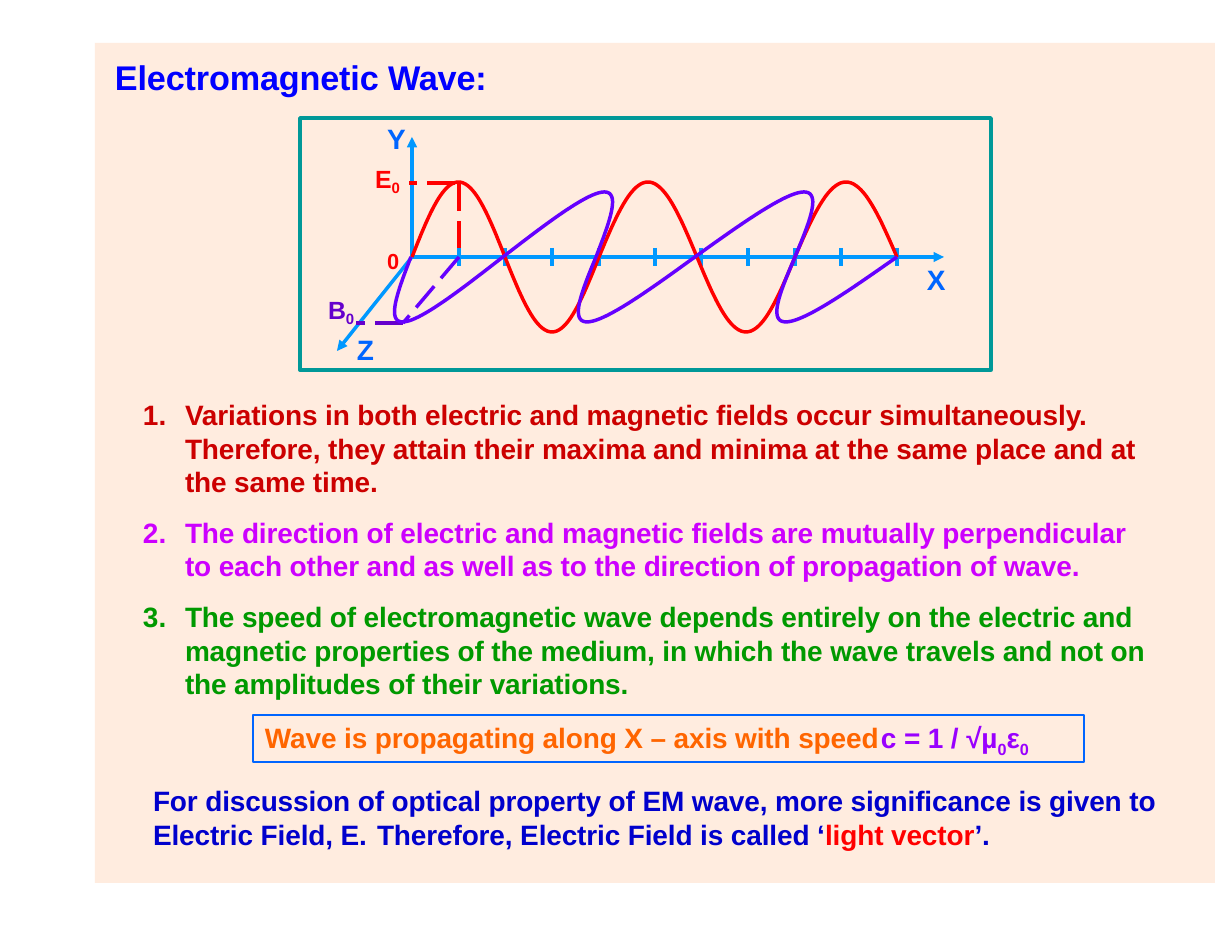
import math
import pptx
import pptx.util
import pptx.dml.color
import pptx.enum.dml
import pptx.enum.shapes
import pptx.oxml
import pptx.oxml.ns

RGB = pptx.dml.color.RGBColor
CREAM = RGB(0xFF, 0xEC, 0xDF)
SKY = RGB(0x00, 0x98, 0xFF)
AZURE = RGB(0x00, 0x65, 0xFF)
BLUE = RGB(0x00, 0x00, 0xFF)
NAVY = RGB(0x00, 0x00, 0xCC)
TEAL = RGB(0x00, 0x98, 0x98)
RED = RGB(0xFF, 0x00, 0x00)
BRICK = RGB(0xCC, 0x00, 0x00)
GREEN = RGB(0x00, 0x99, 0x00)
PINK = RGB(0xCC, 0x00, 0xFF)
ORANGE = RGB(0xFF, 0x65, 0x00)
PURPLE = RGB(0x99, 0x00, 0xFF)
VIOLET = RGB(0x65, 0x00, 0xFF)
PLUM = RGB(0x65, 0x00, 0xCC)

SCALE = 914400 / 112
MID = 257      # height of the X axis
SLANT = 0.59   # sideways lean of the magnetic wave, per half-wave width
STEPS = 40


def px(n):
    return round(n * SCALE)


def child(node, tag, **attrs):
    """Append a DrawingML element."""
    part = pptx.oxml.parse_xml(f"<a:{tag} {pptx.oxml.ns.nsdecls('a')}/>")
    for key, value in attrs.items():
        part.set(key, str(value))
    node.append(part)
    return part


def line(slide, x1, y1, x2, y2, color, dash=False, arrow=False):
    link = slide.shapes.add_connector(
        pptx.enum.shapes.MSO_CONNECTOR.STRAIGHT, px(x1), px(y1), px(x2), px(y2))
    link.line.color.rgb = color
    link.line.width = pptx.util.Pt(2.25)
    if dash:
        link.line.dash_style = pptx.enum.dml.MSO_LINE.LONG_DASH
    if arrow:
        child(link.line._get_or_add_ln(), "tailEnd", type="triangle")
    child(link._element.spPr, "effectLst")


def box(slide, x, y, w, h, fill=None, edge=None, width=2.25):
    rect = slide.shapes.add_shape(
        pptx.enum.shapes.MSO_SHAPE.RECTANGLE, px(x), px(y), px(w), px(h))
    rect.shadow.inherit = False
    if fill is None:
        rect.fill.background()
    else:
        rect.fill.solid()
        rect.fill.fore_color.rgb = fill
    if edge is None:
        rect.line.fill.background()
    else:
        rect.line.color.rgb = edge
        rect.line.width = pptx.util.Pt(width)
    return rect


def wave(slide, nodes, height, slant, color):
    """Draw one sine arc between each pair of nodes, on alternate sides."""
    for left, right in zip(nodes, nodes[1:]):
        span = right - left
        lean = math.copysign(slant * span, height)
        points = []
        for step in range(STEPS + 1):
            part = step / STEPS
            rise = math.sin(math.pi * part)
            points.append((px(left + span * part + lean * rise),
                           px(MID - height * rise)))
        pen = slide.shapes.build_freeform(*points[0], scale=1.0)
        pen.add_line_segments(points[1:], close=False)
        arc = pen.convert_to_shape()
        arc.shadow.inherit = False
        arc.fill.background()
        arc.line.color.rgb = color
        arc.line.width = pptx.util.Pt(2.25)
        height = -height


def style(run, size, color, base=0):
    run.font.name = "Arial"
    run.font.bold = True
    run.font.size = pptx.util.Pt(size)
    run.font.color.rgb = color
    props = run._r.get_or_add_rPr()
    props.set("spc", "-8")
    if base:
        props.set("baseline", str(base * 1000))


def para(p, runs, before=0, left=0, hang=0, tab=None):
    """Fill a paragraph; a hanging one is numbered."""
    p.space_before = pptx.util.Pt(before)
    p.alignment = pptx.enum.text.PP_ALIGN.LEFT
    props = p._p.get_or_add_pPr()
    props.set("marL", str(px(left)))
    props.set("indent", str(px(-hang)))
    if hang:
        child(props, "buFont", typeface="+mj-lt")
        child(props, "buAutoNum", type="arabicPeriod")
    if tab:
        child(child(props, "tabLst"), "tab", pos=px(tab), algn="l")
    for words, *look in runs:
        run = p.add_run()
        run.text = words
        style(run, *look)


def write(shape, top, rows):
    frame = shape.text_frame
    frame.word_wrap = True
    frame.vertical_anchor = pptx.enum.text.MSO_ANCHOR.TOP
    frame.margin_left = frame.margin_right = frame.margin_bottom = 0
    frame.margin_top = px(top)
    for n, row in enumerate(rows):
        para(frame.add_paragraph() if n else frame.paragraphs[0], **row)


def text(slide, x, y, w, h, top, rows):
    write(slide.shapes.add_textbox(px(x), px(y), px(w), px(h)), top, rows)


def graph(slide):
    # Axes and ticks
    for x in (459, 505, 552, 599, 655, 701, 748, 795, 841, 897):
        line(slide, x, 248, x, 266, SKY)
    for x, y in ((944, MID), (412, 137), (337, 351)):
        line(slide, 412, MID, x, y, SKY, arrow=True)
    # Amplitude guides
    line(slide, 455, 183, 409, 183, RED, dash=True)
    line(slide, 459, 183, 459, 248, RED, dash=True)
    line(slide, 459, MID, 403, 323, VIOLET, dash=True)
    line(slide, 403, 323, 356, 323, PLUM, dash=True)
    box(slide, 300, 118, 691, 252, edge=TEAL)
    # Electric and magnetic waves
    wave(slide, (412, 505, 599, 697, 795, 897), 75, 0, RED)
    wave(slide, (411, 503, 596, 695, 795, 897), -65, SLANT, VIOLET)
    # Axis labels
    text(slide, 927, 261, 20, 37, 1,
         [dict(runs=[("X", 18, AZURE)], before=1)])
    text(slide, 371, 113, 40, 159, 9, [
        dict(runs=[("Y", 18, AZURE)], before=6, left=16),
        dict(runs=[("E", 16, RED), ("0", 16.5, RED, -20)], before=4.4, left=4),
        dict(runs=[("0", 14, RED)], before=33, left=16)])


def main():
    deck = pptx.Presentation()
    deck.slide_width, deck.slide_height = px(1232), px(952)
    slide = deck.slides.add_slide(deck.slide_layouts[6])

    # Panel and title
    box(slide, 95, 43, 1120, 840, fill=CREAM)
    text(slide, 114, 55, 380, 44, 1,
         [dict(runs=[("Electromagnetic Wave:", 22, BLUE)], before=0.9, left=1)])

    graph(slide)

    # Lower labels and numbered facts
    facts = (
        ("Variations in both electric and magnetic fields occur simultaneously. "
         "Therefore, they attain their maxima and minima at the same place and "
         "at the same time.", BRICK, 20.5),
        ("The direction of electric and magnetic fields are mutually "
         "perpendicular to each other and as well as to the direction of "
         "propagation of wave.", PINK, 10.9),
        ("The speed of electromagnetic wave depends entirely on the electric "
         "and magnetic properties of the medium, in which the wave travels and "
         "not on the amplitudes of their variations.", GREEN, 10.9))
    rows = [
        dict(runs=[("B", 16, PLUM), ("0", 16.5, PLUM, -20)], before=3.5, left=188),
        dict(runs=[("Z", 18, AZURE)], before=2.8, left=217)]
    rows += [dict(runs=[(words, 18, color)], before=gap, left=45, hang=42)
             for words, color, gap in facts]
    text(slide, 140, 288, 1018, 410, 6, rows)

    # Speed formula
    bar = box(slide, 253, 715, 831, 47, CREAM, AZURE, 1.5)
    write(bar, 6, [dict(before=4, left=12, tab=664, runs=[
        ("Wave is propagating along X – axis with speed\t", 18, ORANGE),
        ("c = 1 / √µ", 18, PURPLE), ("0", 18, PURPLE, -23),
        ("ε", 18, PURPLE), ("0", 18, PURPLE, -23)])])

    # Closing remark
    text(slide, 152, 783, 1016, 71, 1, [dict(before=0.8, left=1, tab=233, runs=[
        ("For discussion of optical property of EM wave, more significance is "
         "given to Electric Field, E.\tTherefore, Electric Field is called ‘",
         18, NAVY),
        ("light vector", 18, RED), ("’.", 18, NAVY)])])

    deck.save("out.pptx")


if __name__ == "__main__":
    main()
